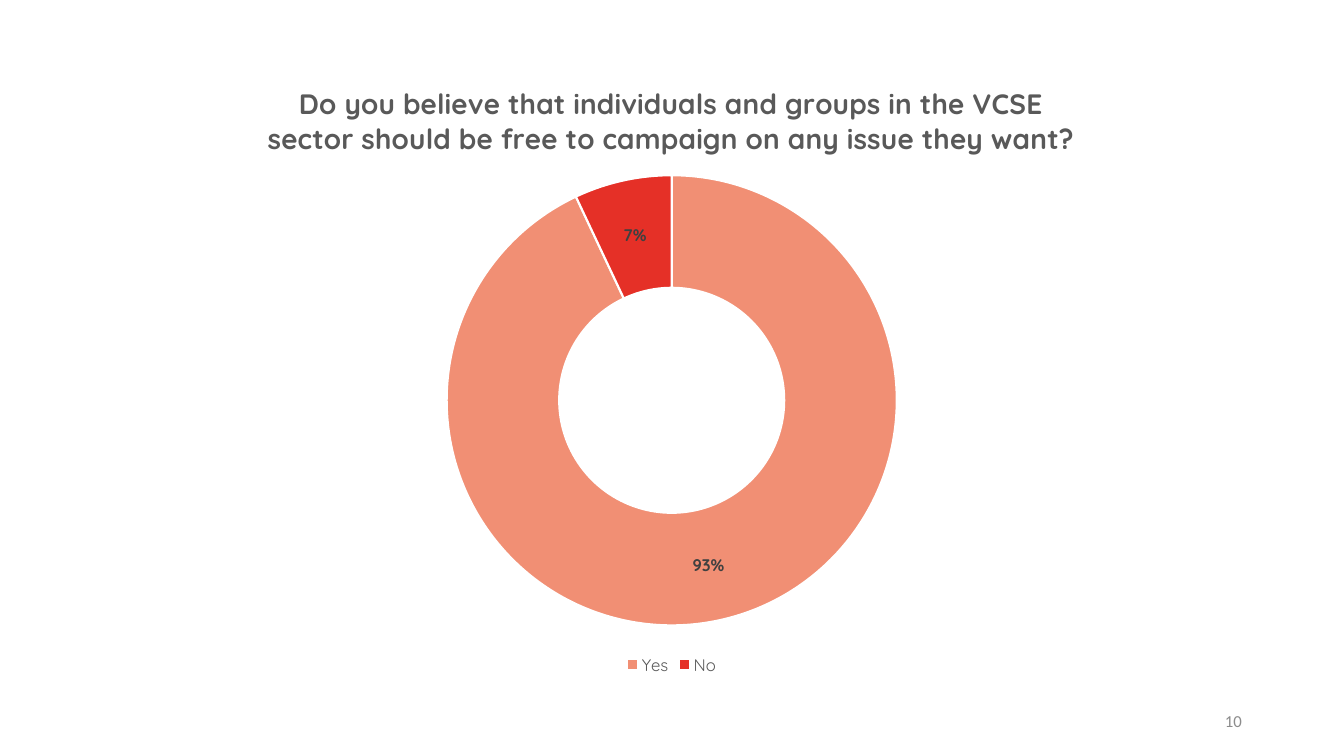
from dataclasses import dataclass

from lxml.etree import SubElement
from pptx import Presentation
from pptx.chart.data import CategoryChartData
from pptx.dml.color import RGBColor
from pptx.enum.chart import XL_CHART_TYPE, XL_LEGEND_POSITION
from pptx.enum.text import MSO_ANCHOR, PP_ALIGN
from pptx.oxml.ns import qn
from pptx.util import Cm, Pt


@dataclass(frozen=True)
class Theme:
    heading_font: str = "Quicksand"
    number_font: str = "Calibri"
    title_size: int = 20
    small_size: int = 12
    grey: str = "595959"
    dark: str = "404040"
    pale: str = "8C8C8C"
    white: str = "FFFFFF"
    slices: tuple = ("F18F74", "E53027")


theme = Theme()


def write(frame, text, *, font=theme.heading_font, size=theme.small_size,
          color=theme.grey, bold=False, align=PP_ALIGN.CENTER):
    para = frame.paragraphs[0]
    para.alignment = align
    span = para.add_run()
    span.text = text
    span.font.name = font
    span.font.size = Pt(size)
    span.font.bold = bold
    span.font.color.rgb = RGBColor.from_string(color)


def place(layout, **fractions):
    """Fix a chart part at x, y, w, h, given as fractions of the chart."""
    manual = SubElement(layout, qn("c:manualLayout"))
    if "w" in fractions:
        SubElement(manual, qn("c:layoutTarget")).set("val", "inner")
    for axis in "xy":
        SubElement(manual, qn(f"c:{axis}Mode")).set("val", "edge")
    for name, value in fractions.items():
        SubElement(manual, qn(f"c:{name}")).set("val", str(value))


deck = Presentation()
deck.slide_width, deck.slide_height = Cm(33.87), Cm(19.05)
page = deck.slides.add_slide(deck.slide_layouts[6])

# Doughnut chart
answers = CategoryChartData()
answers.categories = ["Yes", "No"]
answers.add_series("Series 1", (93, 7))
chart = page.shapes.add_chart(
    XL_CHART_TYPE.DOUGHNUT, Cm(4.04), Cm(1.32), Cm(25.78), Cm(15.8), answers
).chart
chart.font.name = theme.number_font
chart.font.size = Pt(10)

chart.has_title = True
write(chart.chart_title.text_frame,
      "Do you believe that individuals and groups in the VCSE sector "
      "should be free to campaign on any issue they want?",
      size=theme.title_size, bold=True)
title = chart.chart_title._element
place(title.get_or_add_layout() if hasattr(title, "get_or_add_layout")
      else title.find(qn("c:layout")), x=0.1, y=0.04)

plot = chart.plots[0]
plot.vary_by_categories = True
plot_area = plot._element.getparent()
plot_layout = plot_area.find(qn("c:layout"))
if plot_layout is None:
    plot_layout = SubElement(plot_area, qn("c:layout"))
    plot_area.insert(0, plot_layout)
place(plot_layout, x=0.28, y=0.19, w=0.44, h=0.73)

for index, color in enumerate(theme.slices):
    piece = plot.series[0].points[index].format
    piece.fill.solid()
    piece.fill.fore_color.rgb = RGBColor.from_string(color)
    piece.line.color.rgb = RGBColor.from_string(theme.white)
    piece.line.width = Pt(1.5)

labels = plot.series[0].data_labels
labels.show_percentage = True
labels.show_value = False
labels.number_format = "0%"
labels.number_format_is_linked = False

chart.has_legend = True
chart.legend.position = XL_LEGEND_POSITION.BOTTOM
chart.legend.include_in_layout = False

for part, color, bold in ((labels, theme.dark, True),
                          (chart.legend, theme.grey, False)):
    part.font.name = theme.heading_font
    part.font.size = Pt(theme.small_size)
    part.font.bold = bold
    part.font.color.rgb = RGBColor.from_string(color)

# Page number
box = page.shapes.add_textbox(Cm(23.93), Cm(17.65), Cm(7.62), Cm(1.02))
box.text_frame.word_wrap = True
box.text_frame.vertical_anchor = MSO_ANCHOR.MIDDLE
write(box.text_frame, "10", font=theme.number_font, color=theme.pale,
      align=PP_ALIGN.RIGHT)

deck.save("out.pptx")
